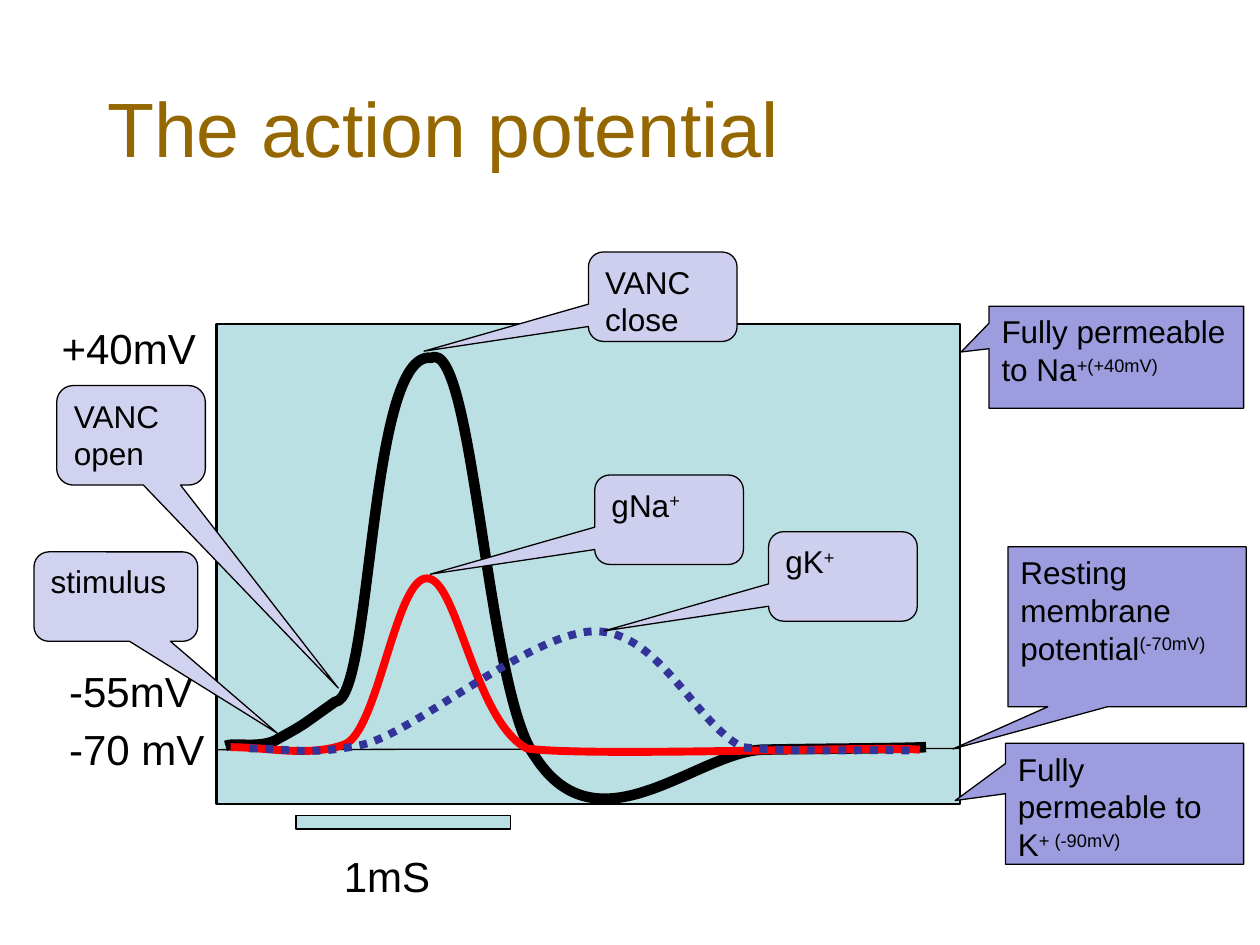
from lxml import etree
from pptx import Presentation
from pptx.dml.color import RGBColor
from pptx.enum.dml import MSO_LINE as Dash
from pptx.enum.shapes import MSO_CONNECTOR as Link, MSO_SHAPE as Form
from pptx.enum.text import MSO_ANCHOR as Anchor, MSO_AUTO_SIZE as Fit, PP_ALIGN as Align
from pptx.oxml.ns import qn
from pptx.util import Inches, Pt

GOLD = RGBColor(0x95, 0x67, 0x00)
BLACK = RGBColor(0, 0, 0)
AQUA = RGBColor(0xBB, 0xE0, 0xE3)
RED = RGBColor(0xFF, 0, 0)
NAVY = RGBColor(0x33, 0x33, 0x99)
LILAC = RGBColor(0xD1, 0xD1, 0xF0)
MAUVE = RGBColor(0xCE, 0xCE, 0xEF)
VIOLET = RGBColor(0x9C, 0x9C, 0xDF)
ROUND = Form.ROUNDED_RECTANGULAR_CALLOUT
SQUARE = Form.RECTANGULAR_CALLOUT

VOLTAGE = [(0.07, 3.35),
           (0.13, 3.32), (0.32, 3.37), (0.46, 3.31),
           (0.71, 3.17), (0.63, 3.22), (0.94, 3.0),
           (1.24, 2.99), (1.2, 0.21), (1.7, 0.27),
           (2.04, 0.1), (2.14, 2.93), (2.53, 3.44),
           (3.03, 4.21), (3.82, 3.39), (4.34, 3.38),
           (4.86, 3.37), (5.41, 3.37), (5.63, 3.36)]
SODIUM = [(0.11, 3.36),
          (0.41, 3.36), (0.73, 3.44), (1.01, 3.34),
          (1.28, 3.25), (1.42, 2.01), (1.67, 2.02),
          (1.91, 2.02), (2.04, 3.14), (2.46, 3.37),
          (2.93, 3.44), (5.28, 3.35), (5.58, 3.38)]
POTASSIUM = [(0.26, 3.37),
             (0.56, 3.37), (0.74, 3.43), (1.16, 3.34),
             (1.58, 3.24), (2.49, 2.45), (3.0, 2.44),
             (3.51, 2.44), (3.79, 3.16), (4.17, 3.36),
             (4.64, 3.41), (5.25, 3.37), (5.55, 3.39)]

LABELS = [("-70 mV", 0.45, 5.69, 1.29), ("-55mV", 0.45, 5.23, 1.19),
          ("+40mV", 0.39, 2.51, 1.28), ("1mS", 2.63, 6.7, 0.89)]
NOTES = [
    (ROUND, LILAC, (0.45, 3.06, 1.18, 0.79), (1.394, 2.539), "VANC open", ""),
    (ROUND, MAUVE, (4.67, 2, 1.18, 0.71), (-1.606, 0.609), "VANC close", ""),
    (SQUARE, VIOLET, (7.85, 2.43, 2.02, 0.81), (-0.61, -0.051),
     "Fully permeable to Na", "+(+40mV)"),
    (SQUARE, VIOLET, (7.98, 5.9, 1.89, 0.96), (-0.711, -0.027),
     "Fully permeable to K", "+ (-90mV)"),
    (ROUND, LILAC, (0.27, 4.38, 1.3, 0.71), (0.986, 1.528), "stimulus", ""),
    (SQUARE, VIOLET, (8, 4.34, 1.89, 1.27), (-0.731, 0.763),
     "Resting membrane potential", "(-70mV)"),
    (ROUND, MAUVE, (4.72, 3.77, 1.18, 0.71), (-1.606, 0.609), "gNa", "+"),
    (ROUND, MAUVE, (6.1, 4.22, 1.18, 0.71), (-1.606, 0.609), "gK", "+"),
]


def style(para, size, color):
    """Left-align a paragraph and set its font."""
    para.alignment = Align.LEFT
    para.font.name = "Arial"
    para.font.size = Pt(size)
    para.font.color.rgb = color


def place(shape, box):
    """Move and size a shape to the box."""
    shape.left, shape.top, shape.width, shape.height = map(Inches, box)


def add_title(slide, box):
    """Place the slide title in the box."""
    title = slide.shapes.title
    place(title, box)
    title.text_frame.text = "The action potential"
    title.text_frame.vertical_anchor = Anchor.BOTTOM
    style(title.text_frame.paragraphs[0], 44, GOLD)


def add_block(slide, form, box, fill, weight):
    """Add a filled, black-edged preset shape."""
    shape = slide.shapes.add_shape(form, *map(Inches, box))
    shape.shadow.inherit = False
    shape.fill.solid()
    shape.fill.fore_color.rgb = fill
    shape.line.color.rgb = BLACK
    shape.line.width = Pt(weight)
    return shape


def bend(curve, box, knots):
    """Give a freeform an outline of cubic Bezier segments."""
    left, top, width, height = box
    route = next(curve._element.iter(qn("a:path")))
    for part in list(route):
        route.remove(part)
    route.set("w", str(Inches(width)))
    route.set("h", str(Inches(height)))
    chain = [("a:moveTo", knots[:1])]
    chain += [("a:cubicBezTo", knots[i:i + 3]) for i in range(1, len(knots), 3)]
    for tag, points in chain:
        part = etree.SubElement(route, qn(tag))
        for x, y in points:
            etree.SubElement(part, qn("a:pt"),
                             x=str(Inches(x - left)), y=str(Inches(y - top)))


def add_curve(slide, plot, box, knots, color, weight, dash=None):
    """Draw an open curve; its box and knots start at the plot's corner."""
    points = [(Inches(x), Inches(y)) for x, y in knots[::3]]
    pen = slide.shapes.build_freeform(*points[0])
    pen.add_line_segments(points[1:], close=False)
    curve = pen.convert_to_shape()
    bend(curve, box, knots)
    place(curve, (plot[0] + box[0], plot[1] + box[1], box[2], box[3]))
    curve.shadow.inherit = False
    curve.fill.background()
    curve.line.color.rgb = color
    curve.line.width = Pt(weight)
    if dash:
        curve.line.dash_style = dash


def add_plot(slide, box):
    """Draw the panel, its curves, the resting line and the time bar."""
    left, top, width, height = box
    add_block(slide, Form.RECTANGLE, box, AQUA, 1.5)
    add_curve(slide, box, (0.07, 0.26, 5.56, 3.51), VOLTAGE, BLACK, 6)
    rest = slide.shapes.add_connector(
        Link.STRAIGHT, Inches(left + 0.01), Inches(top + 3.38),
        Inches(left + width - 0.01), Inches(top + 3.37))
    rest.line.color.rgb = BLACK
    rest.line.width = Pt(0.75)
    etree.SubElement(rest._element.spPr, qn("a:effectLst"))
    add_curve(slide, box, (0.11, 2.02, 5.47, 1.38), SODIUM, RED, 4.5)
    add_curve(slide, box, (0.26, 2.44, 5.29, 0.95), POTASSIUM, NAVY, 4.5,
              Dash.ROUND_DOT)
    bar = (left + 0.63, top + height + 0.09, 1.7, 0.11)
    add_block(slide, Form.RECTANGLE, bar, AQUA, 0.75)


def add_label(slide, text, left, top, width):
    """Add a one-line label."""
    label = slide.shapes.add_textbox(*map(Inches, (left, top, width, 0.5)))
    frame = label.text_frame
    frame.word_wrap = False
    frame.auto_size = Fit.SHAPE_TO_FIT_TEXT
    frame.text = text
    style(frame.paragraphs[0], 24, BLACK)


def add_note(slide, form, fill, box, tip, text, power):
    """Add a callout with its tip and a raised ending."""
    note = add_block(slide, form, box, fill, 0.75)
    note.adjustments[0], note.adjustments[1] = tip
    frame = note.text_frame
    frame.word_wrap = True
    frame.vertical_anchor = Anchor.TOP
    para = frame.paragraphs[0]
    style(para, 18, BLACK)
    para.add_run().text = text
    if power:
        run = para.add_run()
        run.text = power
        run._r.get_or_add_rPr().set("baseline", "30000")


def main():
    """Build and save the slide."""
    deck = Presentation()
    deck.slide_width, deck.slide_height = Inches(10), Inches(7.5)
    slide = deck.slides.add_slide(deck.slide_layouts[5])
    add_title(slide, (0.75, 0.42, 8.5, 1))
    add_plot(slide, (1.72, 2.57, 5.9, 3.81))
    for label in LABELS:
        add_label(slide, *label)
    for note in NOTES:
        add_note(slide, *note)
    deck.save("out.pptx")


if __name__ == "__main__":
    main()
